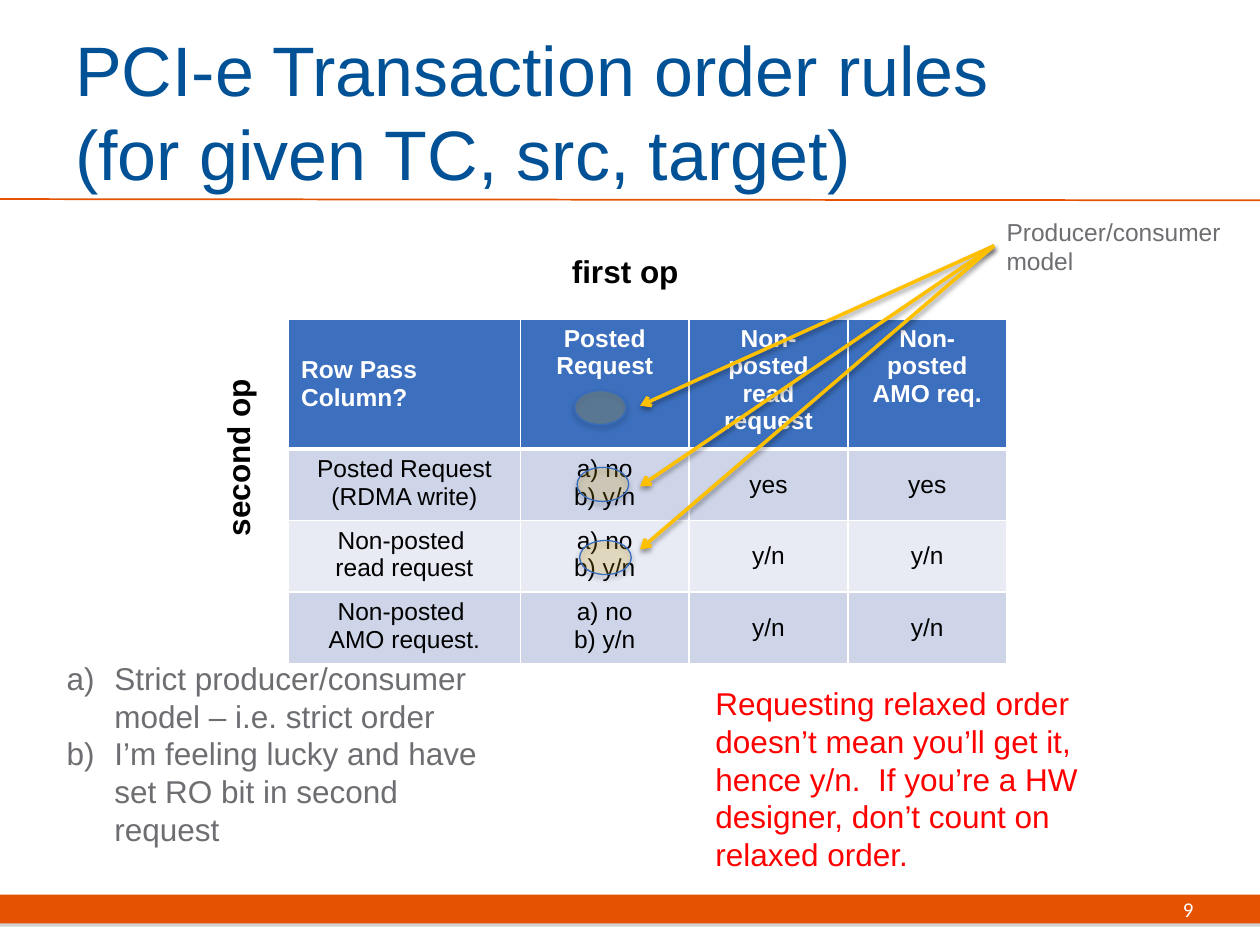
from lxml import etree
from pptx import Presentation
from pptx import util as u
from pptx.dml import color
from pptx.enum import shapes, text
from pptx.oxml import ns

LEFT, MID, RIGHT = text.PP_ALIGN.LEFT, text.PP_ALIGN.CENTER, text.PP_ALIGN.RIGHT
TOP, CORE = text.MSO_ANCHOR.TOP, text.MSO_ANCHOR.MIDDLE


def inch(*nums):
    return [u.Inches(n) for n in nums]


def hue(code):
    return color.RGBColor.from_string(code)


def tag(root, name, **attrs):
    return etree.SubElement(root, ns.qn("a:" + name), attrs)


def tint(root, code, alpha=100):
    clr = tag(tag(root, "solidFill"), "srgbClr", val=code)
    if alpha < 100:
        tag(clr, "alpha", val=str(alpha * 1000))


def style(font, size, code, bold=False, name="Arial"):
    for key, val in dict(size=u.Pt(size), bold=bold, name=name).items():
        setattr(font, key, val)
    font.color.rgb = hue(code)


def shade(item, code, alpha, blur, dist):
    props = item._element.spPr
    for old in props.findall(ns.qn("a:effectLst")):
        props.remove(old)
    glow = tag(tag(props, "effectLst"), "outerShdw", blurRad=str(u.Pt(blur)),
               dist=str(u.Pt(dist)), dir="5400000", rotWithShape="0")
    clr = tag(glow, "srgbClr", val=code)
    tag(clr, "alpha", val=str(alpha * 1000))


def label(slide, box, lines, size, code, bold=False, name="Arial",
          align=LEFT, anchor=TOP, turn=0, list_type=None):
    item = slide.shapes.add_textbox(*inch(*box))
    item.rotation = turn
    frame = item.text_frame
    for key, val in dict(word_wrap=True, vertical_anchor=anchor).items():
        setattr(frame, key, val)
    for n, line in enumerate(lines):
        para = frame.paragraphs[0] if n == 0 else frame.add_paragraph()
        para.text = line
        para.alignment = align
        if list_type:
            props = para._p.get_or_add_pPr()
            props.set("marL", str(u.Inches(0.38)))
            props.set("indent", str(u.Inches(-0.38)))
            tag(props, "buFont", typeface="+mj-lt")
            tag(props, "buAutoNum", type=list_type)
        for run in para.runs:
            style(run.font, size, code, bold, name)


def line(slide, start, end, code, width):
    item = slide.shapes.add_connector(
        shapes.MSO_CONNECTOR.STRAIGHT, *inch(*start, *end))
    item.line.color.rgb = hue(code)
    item.line.width = u.Pt(width)
    return item


def footer(slide, box):
    x, y, w, h = box
    bar = slide.shapes.add_shape(shapes.MSO_SHAPE.RECTANGLE, *inch(*box))
    bar.fill.solid()
    bar.fill.fore_color.rgb = hue("E55302")
    bar.line.fill.background()
    shade(bar, "808080", 35, 0, 1.8)
    label(slide, (x + 8.38, y, 1.19, h), ["9"], 12, "FFFFFF",
          name="Calibri", align=RIGHT, anchor=CORE)


def header(slide, box):
    x, y, w, h = box
    rule = line(slide, (x, y + 1.58), (x + w, y + 1.59), "E55302", 1)
    tag(rule._element.spPr, "effectLst")
    label(slide, (x + 0.5, y + 0.25, 8.17, 1.25),
          ["PCI-e Transaction order rules (for given TC, src, target)"],
          40, "005195", anchor=CORE)


def edge(cell, row):
    props = cell._tc.get_or_add_tcPr()
    widths = dict(lnL=1, lnR=1, lnT=3 if row == 1 else 1, lnB=1 if row else 3)
    for name, width in widths.items():
        tint(tag(props, name, w=str(u.Pt(width))), "FFFFFF")


def grid(slide, box):
    rows = [
        ["Row Pass Column?", "Posted Request", "Non-posted\vread request",
         "Non-posted AMO req."],
        ["Posted Request\v(RDMA write)", "a) no\vb) y/n", "yes", "yes"],
        ["Non-posted \vread request", "a) no\vb) y/n", "y/n", "y/n"],
        ["Non-posted \vAMO request.", "a) no\vb) y/n", "y/n", "y/n"],
    ]
    fills = ["3C6FBD", "CED5E8", "E8EBF4", "CED5E8"]
    table = slide.shapes.add_table(4, 4, *inch(*box)).table
    for col, width in zip(table.columns, inch(1.84, 1.34, 1.26, 1.26)):
        col.width = width
    for r, row in enumerate(rows):
        table.rows[r].height = u.Inches(0.41)
        for c, words in enumerate(row):
            cell = table.cell(r, c)
            edge(cell, r)
            cell.fill.solid()
            cell.fill.fore_color.rgb = hue(fills[r])
            corner = r == c == 0
            cell.vertical_anchor = CORE if corner or (r and c > 1) else TOP
            cell.text = words
            para = cell.text_frame.paragraphs[0]
            para.alignment = LEFT if corner else MID
            for run in para.runs:
                style(run.font, 14, "000000" if r else "FFFFFF", r == 0)


def model(slide, box):
    x, y, w, h = box
    for drop in (1.27, 1.91, 2.41):
        arrow = line(slide, (x, y + 0.28), (x - 2.81, y + 0.28 + drop),
                     "FFC000", 2)
        tag(arrow.line._get_or_add_ln(), "tailEnd", type="arrow")
        shade(arrow, "000000", 38, 3.1, 1.6)
    for left, top in ((4.56, 3.1), (4.58, 3.71), (4.6, 4.29)):
        ring = slide.shapes.add_shape(
            shapes.MSO_SHAPE.OVAL, *inch(left, top, 0.41, 0.27))
        ring.fill.solid()
        ring.fill.fore_color.rgb = hue("FFC000")
        clr = ring._element.spPr.find(ns.qn("a:solidFill"))[0]
        tag(clr, "alpha", val="17000")
        ring.line.color.rgb = hue("386CBC")
        ring.line.width = u.Pt(0.75)
        shade(ring, "000000", 35, 3.1, 1.8)
    label(slide, box, ["Producer/consumer model"], 14, "6D6E71")


def notes(slide, box):
    x, y, w, h = box
    label(slide, (x, y, 3.71, h),
          ["Strict producer/consumer model – i.e. strict order",
           "I’m feeling lucky and have set RO bit in second request"],
          18, "6D6E71", list_type="alphaLcParenR")
    label(slide, (x + 5.15, y + 0.2, 3.71, 1.62),
          ["Requesting relaxed order doesn’t mean you’ll get it, hence y/n.  "
           "If you’re a HW designer, don’t count on relaxed order."],
          18, "FF0000")


def main():
    deck = Presentation()
    deck.slide_width, deck.slide_height = inch(10, 7.5)
    slide = deck.slides.add_slide(deck.slide_layouts[6])
    footer(slide, (0, 7.1, 10, 0.23))
    header(slide, (0, 0, 10, 1.59))
    grid(slide, (2.29, 2.53, 5.7, 1.64))
    notes(slide, (0.43, 5.18, 8.86, 1.92))
    label(slide, (4.44, 1.95, 3.44, 0.41), ["first op"], 18, "000000", True)
    label(slide, (0.17, 2.43, 3.44, 0.41), ["second op"], 18, "000000", True,
          turn=270)
    model(slide, (7.89, 1.67, 1.9, 0.57))
    deck.save("out.pptx")


if __name__ == "__main__":
    main()
